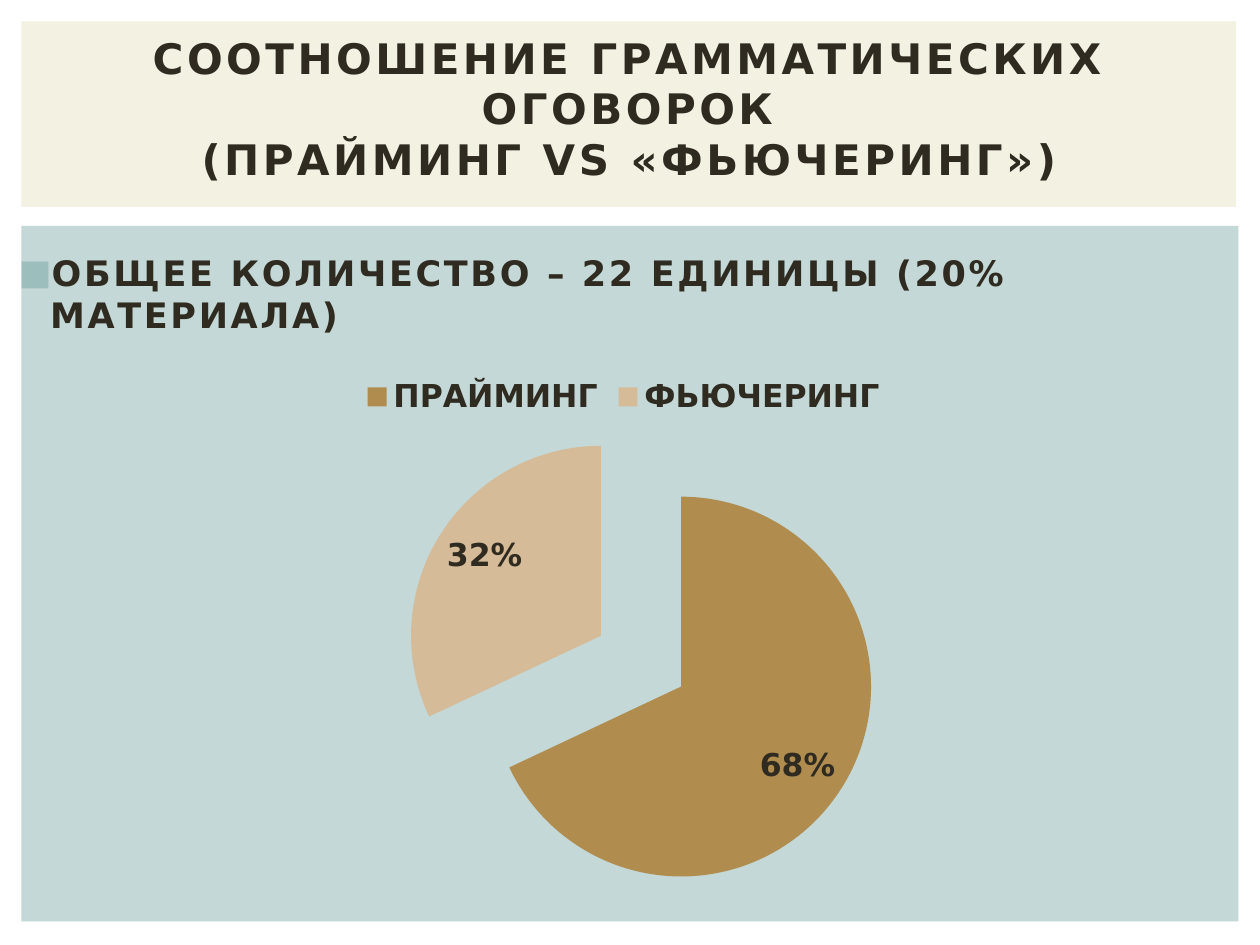
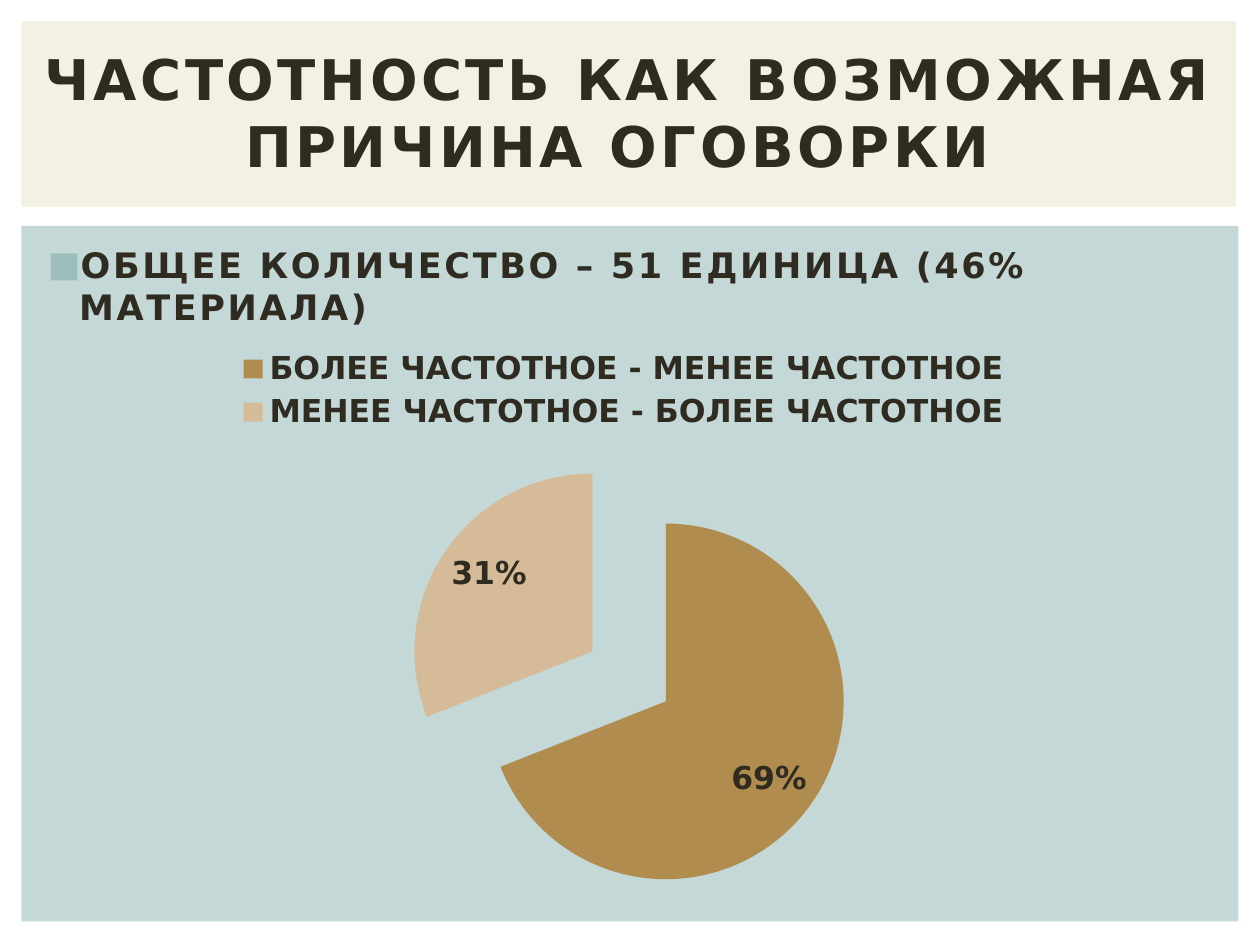
from dataclasses import dataclass
from typing import Optional

from lxml import etree
from pptx import Presentation
from pptx import util as u
from pptx.chart import data as chart_data
from pptx.dml import color
from pptx.enum import chart as chart_enum
from pptx.enum import shapes, text
from pptx.oxml import ns

FONT = "DejaVu Sans"
INK = "2F2B20"
BULLET = "9CBEBD"
SLICE_COLOURS = ("B08D4F", "D5BB98")


@dataclass(frozen=True)
class Box:
    left: float
    top: float
    width: float
    height: float

    def lengths(self) -> tuple:
        return tuple(u.Pt(v) for v in (self.left, self.top, self.width, self.height))


@dataclass(frozen=True)
class Band:
    box: Box
    fill: str


@dataclass(frozen=True)
class PieSlide:
    title_lines: tuple
    title_size: float
    title_box: Box
    summary: str
    summary_box: Box
    shares: dict
    pie_box: Box
    plot: Optional[Box] = None


BANDS = (
    Band(Box(12.25, 129, 695.5, 397.5), "C3D8D7"),
    Band(Box(12.25, 12.25, 694, 106), "F2F1E2"),
)

PIE_SLIDES = (
    PieSlide(
        ("СООТНОШЕНИЕ ГРАММАТИЧЕСКИХ ОГОВОРОК", "(ПРАЙМИНГ VS «ФЬЮЧЕРИНГ»)"),
        24,
        Box(16.5, 14.5, 686, 94.5),
        "ОБЩЕЕ КОЛИЧЕСТВО – 22 ЕДИНИЦЫ (20% МАТЕРИАЛА)",
        Box(0, 140, 720, 62.5),
        {"ПРАЙМИНГ": 68, "ФЬЮЧЕРИНГ ": 32},
        Box(16.5, 207.5, 686, 315.5),
        Box(0.31, 0.11, 0.4, 0.86),
    ),
    PieSlide(
        ("ЧАСТОТНОСТЬ КАК ВОЗМОЖНАЯ ПРИЧИНА ОГОВОРКИ ",),
        32,
        Box(16.5, 16.5, 686, 94.5),
        "ОБЩЕЕ КОЛИЧЕСТВО – 51 ЕДИНИЦА (46% МАТЕРИАЛА)",
        Box(16.5, 135.5, 686, 62.5),
        {"БОЛЕЕ ЧАСТОТНОЕ - МЕНЕЕ ЧАСТОТНОЕ ": 69, "МЕНЕЕ ЧАСТОТНОЕ - БОЛЕЕ ЧАСТОТНОЕ ": 31},
        Box(16.5, 191.5, 686, 332),
    ),
)


def rgb(value: str) -> color.RGBColor:
    return color.RGBColor.from_string(value)


def style_font(font, size: float) -> None:
    font.name = FONT
    font.size = u.Pt(size)
    font.bold = True
    font.color.rgb = rgb(INK)


def add_run(paragraph, words: str, size: float, spacing: float) -> None:
    run = paragraph.add_run()
    run.text = words
    style_font(run.font, size)
    run.font._element.set("spc", str(round(spacing * 100)))


def add_band(slide, band: Band) -> None:
    panel = slide.shapes.add_shape(shapes.MSO_SHAPE.RECTANGLE, *band.box.lengths())
    panel.shadow.inherit = False
    panel.fill.solid()
    panel.fill.fore_color.rgb = rgb(band.fill)
    panel.line.fill.background()
    slide.shapes.title.element.addprevious(panel.element)


def write_title(slide, content: PieSlide) -> None:
    title = slide.shapes.title
    title.left, title.top, title.width, title.height = content.title_box.lengths()
    frame = title.text_frame
    frame.word_wrap = True
    frame.auto_size = text.MSO_AUTO_SIZE.NONE
    frame.vertical_anchor = text.MSO_ANCHOR.MIDDLE
    frame.margin_left = frame.margin_right = u.Pt(4)
    heading = frame.paragraphs[0]
    heading.alignment = text.PP_ALIGN.CENTER
    for index, line in enumerate(content.title_lines):
        if index:
            heading.add_line_break()
        add_run(heading, line, content.title_size, 2)


def add_summary(slide, content: PieSlide) -> None:
    frame = slide.shapes.add_textbox(*content.summary_box.lengths()).text_frame
    frame.word_wrap = True
    paragraph = frame.paragraphs[0]
    add_run(paragraph, content.summary, 20, 1.5)
    properties = paragraph._p.get_or_add_pPr()
    properties.set("marL", str(u.Pt(21.6)))
    properties.set("indent", str(-u.Pt(18)))
    bullet_colour = etree.SubElement(properties, ns.qn("a:buClr"))
    etree.SubElement(bullet_colour, ns.qn("a:srgbClr"), val=BULLET)
    etree.SubElement(properties, ns.qn("a:buFont"), typeface=FONT)
    etree.SubElement(properties, ns.qn("a:buChar"), char="■")


def place_plot(chart, plot: Box) -> None:
    area = chart._chartSpace.find(".//" + ns.qn("c:plotArea"))
    layout = area.find(ns.qn("c:layout"))
    if layout is None:
        layout = etree.Element(ns.qn("c:layout"))
        area.insert(0, layout)
    manual = etree.SubElement(layout, ns.qn("c:manualLayout"))
    settings = (
        ("layoutTarget", "inner"), ("xMode", "edge"), ("yMode", "edge"),
        ("x", plot.left), ("y", plot.top), ("w", plot.width), ("h", plot.height),
    )
    for tag, value in settings:
        etree.SubElement(manual, ns.qn("c:" + tag), val=str(value))


def add_pie(slide, content: PieSlide) -> None:
    shares = chart_data.CategoryChartData()
    shares.categories = list(content.shares)
    shares.add_series("Series 1", list(content.shares.values()))
    chart = slide.shapes.add_chart(
        chart_enum.XL_CHART_TYPE.PIE, *content.pie_box.lengths(), shares
    ).chart
    style_font(chart.font, 18)
    chart.has_title = False
    chart.has_legend = True
    chart.legend.position = chart_enum.XL_LEGEND_POSITION.TOP
    chart.legend.include_in_layout = False
    pie = chart.plots[0]
    pie.vary_by_categories = True
    series = pie.series[0]
    for index, slice_colour in enumerate(SLICE_COLOURS):
        fill = series.points[index].format.fill
        fill.solid()
        fill.fore_color.rgb = rgb(slice_colour)
    explosion = etree.Element(ns.qn("c:explosion"), val="25")
    series._element.find(ns.qn("c:dPt")).addprevious(explosion)
    pie.has_data_labels = True
    labels = pie.data_labels
    labels.show_percentage = True
    labels.show_value = False
    labels.number_format = "0%"
    labels.number_format_is_linked = False
    labels.position = chart_enum.XL_LABEL_POSITION.INSIDE_END
    style_font(labels.font, 18)
    if content.plot:
        place_plot(chart, content.plot)


def main() -> None:
    deck = Presentation()
    deck.slide_width, deck.slide_height = u.Pt(720), u.Pt(540)
    for content in PIE_SLIDES:
        slide = deck.slides.add_slide(deck.slide_layouts[5])
        for band in BANDS:
            add_band(slide, band)
        write_title(slide, content)
        add_summary(slide, content)
        add_pie(slide, content)
    deck.save("out.pptx")


if __name__ == "__main__":
    main()
